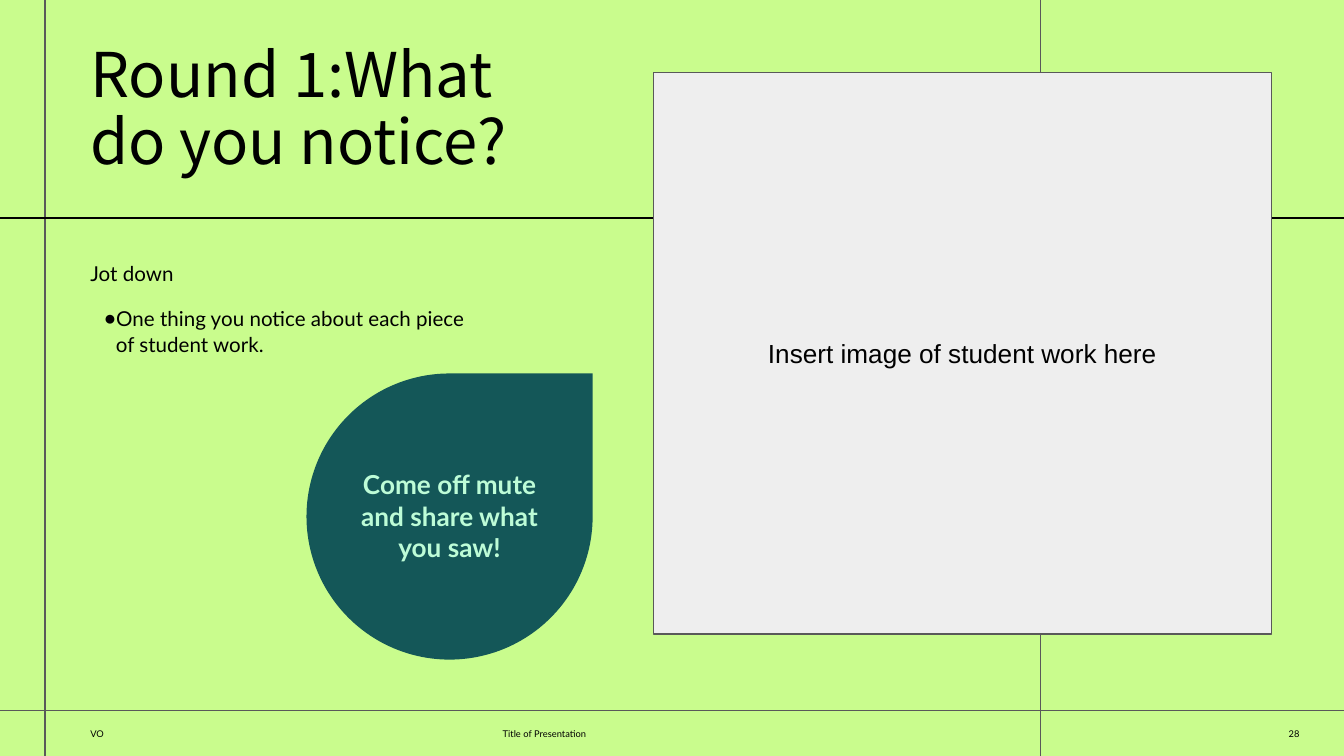
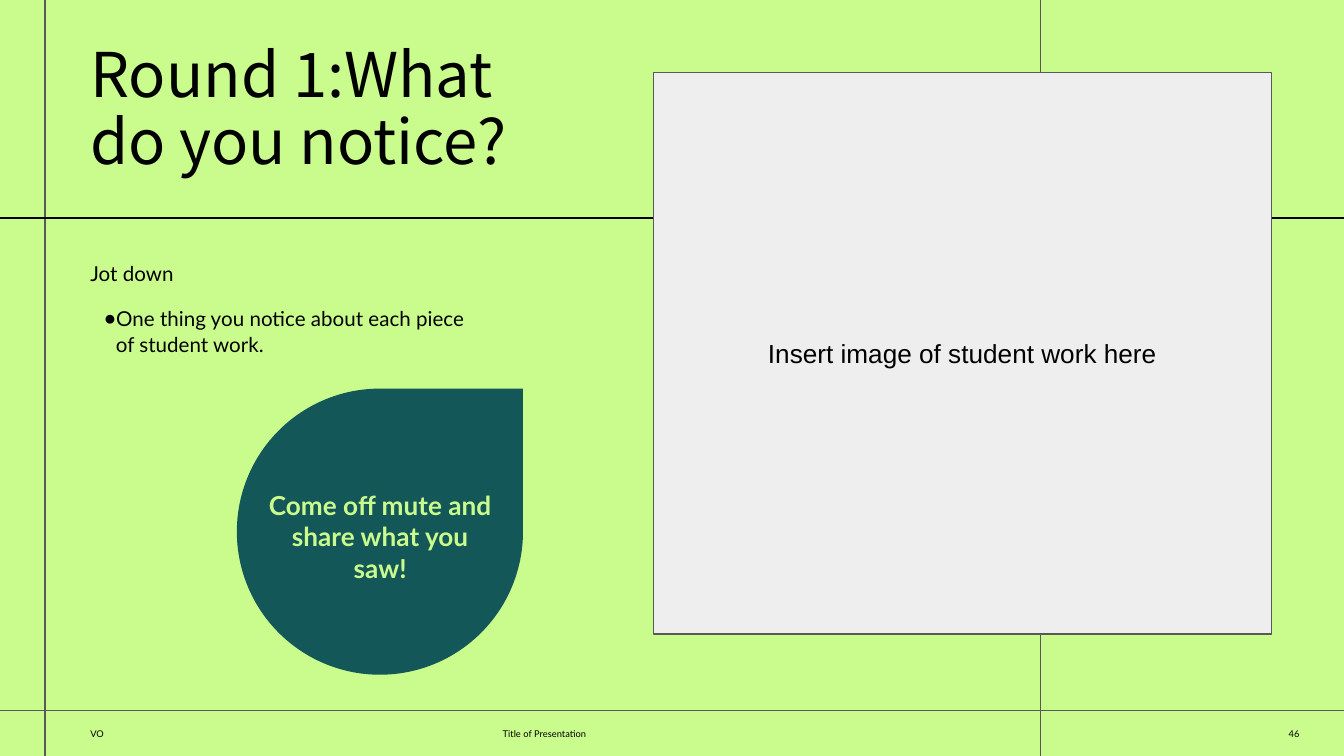
from copy import deepcopy
from dataclasses import dataclass

from lxml.etree import SubElement as Sub
from pptx import Presentation
from pptx.dml.color import RGBColor as Rgb
from pptx.enum.shapes import MSO_CONNECTOR as Conn, MSO_SHAPE as Geo
from pptx.enum.text import MSO_ANCHOR as Anchor, MSO_AUTO_SIZE as Fit, PP_ALIGN as Align
from pptx.oxml.ns import qn
from pptx.util import Pt


@dataclass(frozen=True)
class Theme:
    lime: str = "C9FC8D"
    mint: str = "BDFCD7"
    teal: str = "145758"
    pale: str = "EEEEEE"
    gray: str = "595959"
    black: str = "000000"
    head: str = "Noto Sans CJK KR"
    text: str = "Lato"
    plain: str = "Arial"
    title: int = 33
    call: int = 14
    body: int = 11
    foot: int = 5


look = Theme()
WIDE, HIGH = 720, 405
EDGE, BASE = 48.4, 380.8  # left margin, top of the footer


def write(shape, text, size=look.body, font=look.text, color=look.black, bold=False,
          align=Align.LEFT, anchor=Anchor.TOP, inset=(0, 0, 0, 0), space=1.0,
          before=0, grow=True):
    frame = shape.text_frame
    frame.word_wrap = True
    frame.auto_size = Fit.SHAPE_TO_FIT_TEXT if grow else Fit.NONE
    frame.vertical_anchor = anchor
    frame.margin_left, frame.margin_top, frame.margin_right, frame.margin_bottom = map(Pt, inset)
    para = frame.paragraphs[0]
    para.text = text
    para.alignment, para.line_spacing = align, space
    para.space_before = Pt(before)
    for run in para.runs:
        run.font.size, run.font.name, run.font.bold = Pt(size), font, bold
        run.font.color.rgb = Rgb.from_string(color)
    # Line breaks take the format of the text around them
    for gap in para._p.findall(qn("a:br")):
        gap.append(deepcopy(para.runs[0].font._element))
    return para


def place(shape, x, y, w, h):
    shape.left, shape.top, shape.width, shape.height = map(Pt, (x, y, w, h))
    return shape


prs = Presentation()
prs.slide_width, prs.slide_height = Pt(WIDE), Pt(HIGH)
back = prs.slide_master.background.fill
back.solid()
back.fore_color.rgb = Rgb.from_string(look.lime)

# Grid lines: start, end, colour
rules = [
    ((0, BASE), (WIDE, BASE), look.gray),
    ((24.1, HIGH), (24.1, 0), look.gray),
    ((0, 116.8), (WIDE, 116.8), look.black),
    ((557.6, 0), (557.6, HIGH), look.gray),
]

# Page number, drop corner, note box (left, top, width), note colour
pages = [
    ("28", (164.2, 200.1), (186.3, 251.1, 109.2), look.mint),
    ("46", (126.9, 208.2), (142.5, 262.2, 122.4), look.lime),
]

for page, drop, note, tint in pages:
    slide = prs.slides.add_slide(prs.slide_layouts[1])
    shapes = slide.shapes

    for start, end, color in rules:
        rule = shapes.add_connector(Conn.STRAIGHT, *map(Pt, start + end))
        rule.line.color.rgb = Rgb.from_string(color)
        rule.line.width = Pt(0.75)
        Sub(rule._element.spPr, qn("a:effectLst"))

    # Footer
    for text, x, w, align in [("VO", EDGE, 211, Align.LEFT),
                              ("Title of Presentation", 269.3, 209, Align.LEFT),
                              (page, 485.2, 211, Align.RIGHT)]:
        box = shapes.add_textbox(Pt(x), Pt(BASE), Pt(w), Pt(24.2))
        write(box, text, size=look.foot, align=align, anchor=Anchor.MIDDLE, grow=False)

    # Title
    title = place(shapes.title, EDGE, 23.8, 429, 72)
    write(title, "Round 1:What \vdo you notice?", size=look.title, font=look.head, space=0.9)

    # Prompt and its bullet
    lead = shapes.add_textbox(Pt(EDGE), Pt(139), Pt(206), Pt(13.7))
    write(lead, "Jot down", space=1.05)
    body = place(slide.placeholders[1], EDGE, 163.4, 206, 27.4)
    item = write(body, "One thing you notice about each piece of student work.",
                 space=1.05, before=12, inset=(7.2, 0, 0, 0))
    props = item._p.get_or_add_pPr()
    props.set("marL", str(Pt(6.5)))
    props.set("indent", str(Pt(-12.2)))
    Sub(Sub(props, qn("a:buClr")), qn("a:srgbClr"), val=look.black)
    Sub(props, qn("a:buChar"), char="●")

    # Callout drop
    tear = shapes.add_shape(Geo.TEAR, *map(Pt, drop + (153.3, 153.3)))
    tear.shadow.inherit = False
    tear.fill.solid()
    tear.fill.fore_color.rgb = Rgb.from_string(look.teal)
    tear.line.fill.background()
    x, y, w = note
    call = shapes.add_textbox(Pt(x), Pt(y), Pt(w), Pt(51))
    write(call, "Come off mute and share what you saw!", size=look.call, color=tint,
          bold=True, align=Align.CENTER)

    # Space for student work
    work = shapes.add_shape(Geo.RECTANGLE, Pt(350), Pt(38.7), Pt(331.2), Pt(301))
    work.shadow.inherit = False
    work.fill.solid()
    work.fill.fore_color.rgb = Rgb.from_string(look.pale)
    work.line.color.rgb = Rgb.from_string(look.gray)
    work.line.width = Pt(0.75)
    write(work, "Insert image of student work here", size=look.call, font=look.plain,
          align=Align.CENTER, anchor=Anchor.MIDDLE, inset=(7.2,) * 4, grow=False)

prs.save("out.pptx")
